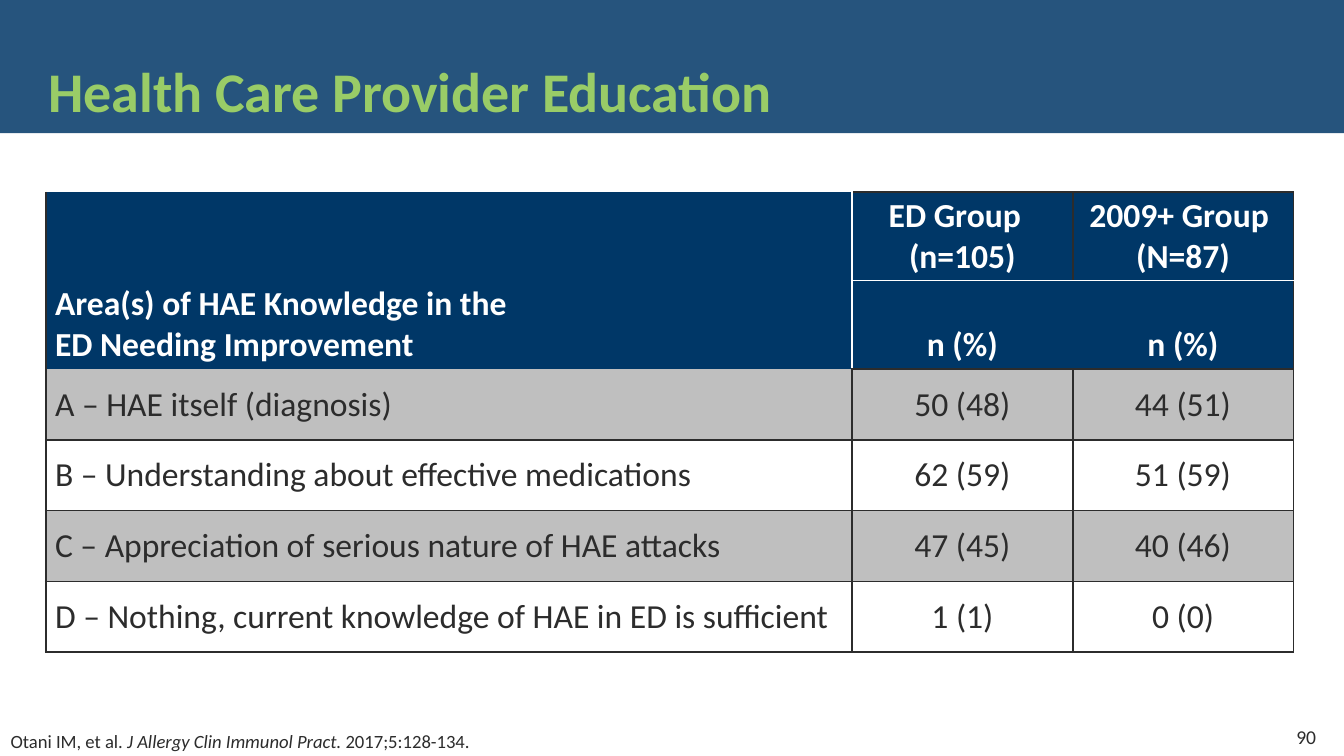
from lxml import etree
from pptx import Presentation
from pptx.dml.color import RGBColor
from pptx.enum.shapes import MSO_SHAPE
from pptx.enum.text import MSO_ANCHOR, MSO_AUTO_SIZE, PP_ALIGN
from pptx.oxml.ns import qn
from pptx.util import Pt

RECTANGLE = MSO_SHAPE.RECTANGLE
TOP, MIDDLE, BOTTOM = MSO_ANCHOR.TOP, MSO_ANCHOR.MIDDLE, MSO_ANCHOR.BOTTOM
LEFT, CENTER, RIGHT = PP_ALIGN.LEFT, PP_ALIGN.CENTER, PP_ALIGN.RIGHT
NO_AUTOSIZE = MSO_AUTO_SIZE.NONE

COLORS = {
    "navy": "003767",
    "green": "99CC67",
    "ink": "2C2C2C",
    "white": "FFFFFF",
    "gray": "BFBFBF",
    "black": "000000",
}

HEADER_ROWS = [
    [["Area(s) of HAE Knowledge in the", "ED Needing Improvement"],
     ["ED Group  ", "(n=105)"], ["2009+ Group ", "(N=87)"]],
    [[], ["n (%)"], ["n (%)"]],
]
BODY_ROWS = [
    ["A – HAE itself (diagnosis)", "50 (48)", "44 (51)"],
    ["B – Understanding about effective medications", "62 (59)", "51 (59)"],
    ["C – Appreciation of serious nature of HAE attacks", "47 (45)", "40 (46)"],
    ["D – Nothing, current knowledge of HAE in ED is sufficient", "1 (1)", "0 (0)"],
]
LABEL_BORDERS = {"L": "ink", "R": "white"}
HEADER_BORDERS = [
    [LABEL_BORDERS,
     {"L": "white", "R": "ink", "T": "ink", "B": "white"},
     {"L": "ink", "R": "ink", "T": "ink", "B": "white"}],
    [LABEL_BORDERS,
     {"L": "white", "T": "white", "B": "ink"},
     {"R": "ink", "T": "white", "B": "ink"}],
]
BODY_BORDERS = dict.fromkeys("LRTB", "ink")
FIRST_LABEL_BORDERS = dict.fromkeys("LRB", "ink")


class SlideBuilder:
    font_name = "Calibri"

    def __init__(self, slide):
        self.slide = slide

    def color(self, name):
        return RGBColor.from_string(COLORS[name])

    def run(self, paragraph, text, size, color, bold=False, italic=False):
        run = paragraph.add_run()
        run.text = text
        run.font.size = Pt(size)
        run.font.bold = bold
        run.font.italic = italic
        run.font.color.rgb = self.color(color)
        run.font.name = self.font_name
        return run

    def add_alpha(self, color_element, percent):
        etree.SubElement(color_element, qn("a:alpha"), val=str(percent * 1000))

    def band(self, left, top, width, height, color, opacity):
        shape = self.slide.shapes.add_shape(
            RECTANGLE, Pt(left), Pt(top), Pt(width), Pt(height))
        shape.shadow.inherit = False
        shape.fill.solid()
        shape.fill.fore_color.rgb = self.color(color)
        shape.line.fill.background()
        fill = shape.element.spPr.find(qn("a:solidFill"))
        self.add_alpha(fill[0], opacity)
        self.slide.shapes.element.insert(2, shape.element)

    def title(self, left, top, width, height, text):
        shape = self.slide.shapes.title
        shape.left, shape.top = Pt(left), Pt(top)
        shape.width, shape.height = Pt(width), Pt(height)
        frame = shape.text_frame
        frame.auto_size = NO_AUTOSIZE
        frame.word_wrap = True
        frame.vertical_anchor = BOTTOM
        paragraph = frame.paragraphs[0]
        paragraph.alignment = LEFT
        paragraph.line_spacing = 0.9
        run = self.run(paragraph, text, 30, "green", bold=True)
        self.text_shadow(run)

    def text_shadow(self, run):
        effects = etree.Element(qn("a:effectLst"))
        shadow = etree.SubElement(
            effects, qn("a:outerShdw"), blurRad=str(Pt(3)), dist=str(Pt(3)),
            dir="2700000", algn="tl")
        color = etree.SubElement(shadow, qn("a:srgbClr"), val=COLORS["black"])
        self.add_alpha(color, 43)
        run.font.fill
        run.font._element.find(qn("a:solidFill")).addnext(effects)

    def text(self, left, top, width, height, runs, size, alignment=LEFT, anchor=TOP):
        box = self.slide.shapes.add_textbox(Pt(left), Pt(top), Pt(width), Pt(height))
        frame = box.text_frame
        frame.word_wrap = True
        frame.vertical_anchor = anchor
        paragraph = frame.paragraphs[0]
        paragraph.alignment = alignment
        for text, italic in runs:
            self.run(paragraph, text, size, "ink", italic=italic)

    def table(self, left, top, widths, heights):
        table = self.slide.shapes.add_table(
            len(heights), len(widths), Pt(left), Pt(top),
            Pt(sum(widths)), Pt(sum(heights))).table
        table.first_row = table.horz_banding = False
        for column, width in zip(table.columns, widths):
            column.width = Pt(width)
        for row, height in zip(table.rows, heights):
            row.height = Pt(height)
        return table

    def cell(self, cell, lines, alignment, anchor, color, fill, borders, bold=False):
        cell.margin_left = cell.margin_right = Pt(5)
        cell.margin_top = cell.margin_bottom = Pt(1.8)
        cell.vertical_anchor = anchor
        if fill:
            cell.fill.solid()
            cell.fill.fore_color.rgb = self.color(fill)
        else:
            cell.fill.background()
        frame = cell.text_frame
        for index, line in enumerate(lines):
            paragraph = frame.add_paragraph() if index else frame.paragraphs[0]
            paragraph.alignment = alignment
            self.run(paragraph, line, 18, color, bold)
        self.cell_borders(cell, borders)

    def cell_borders(self, cell, borders):
        properties = cell._tc.get_or_add_tcPr()
        for index, side in enumerate("LRTB"):
            line = etree.Element(qn(f"a:ln{side}"), w=str(Pt(1)))
            if side in borders:
                fill = etree.SubElement(line, qn("a:solidFill"))
                etree.SubElement(fill, qn("a:srgbClr"), val=COLORS[borders[side]])
            else:
                etree.SubElement(line, qn("a:noFill"))
            properties.insert(index, line)


def main():
    presentation = Presentation()
    presentation.slide_width, presentation.slide_height = Pt(720), Pt(405)
    slide = presentation.slides.add_slide(presentation.slide_layouts[5])
    builder = SlideBuilder(slide)

    builder.band(0, 0, 720, 71.3, "navy", 85)
    builder.title(18.7, 17.3, 643.7, 53.3, "Health Care Provider Education")
    builder.text(-1.4, 387.4, 279.4, 19.4, [
        ("Otani IM, et al. ", False),
        ("J Allergy Clin Immunol Pract.", True),
        (" 2017;5:128-134.", False),
    ], 10)

    table = builder.table(24.5, 102.8, [432, 118.2, 118.2], [47.5] * 2 + [37.9] * 4)
    alignments = [LEFT, CENTER, CENTER]
    table.cell(0, 0).merge(table.cell(1, 0))
    for row, texts in enumerate(HEADER_ROWS):
        for column, lines in enumerate(texts):
            builder.cell(table.cell(row, column), lines, alignments[column], BOTTOM,
                         "white", "navy", HEADER_BORDERS[row][column], bold=True)
    for index, texts in enumerate(BODY_ROWS):
        fill = None if index % 2 else "gray"
        for column, text in enumerate(texts):
            borders = BODY_BORDERS if index or column else FIRST_LABEL_BORDERS
            builder.cell(table.cell(index + len(HEADER_ROWS), column), [text],
                         alignments[column], MIDDLE, "ink", fill, borders)

    builder.text(679, 383.8, 33.1, 21.6, [("90", False)], 10.5, RIGHT, MIDDLE)
    presentation.save("out.pptx")


if __name__ == "__main__":
    main()
